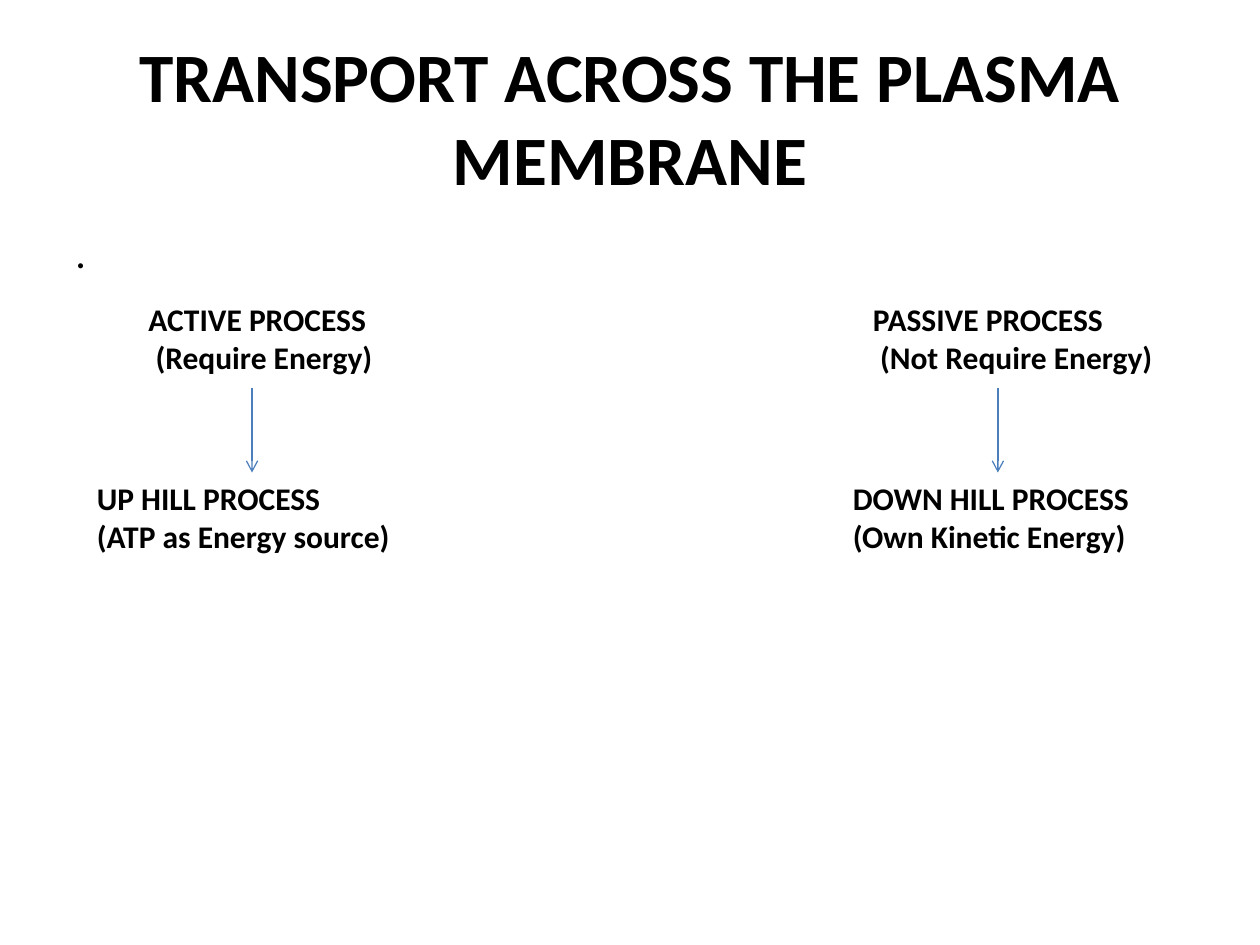
from dataclasses import dataclass

from lxml.etree import SubElement
from pptx import Presentation
from pptx.dml.color import RGBColor
from pptx.enum.shapes import MSO_CONNECTOR
from pptx.enum.text import MSO_ANCHOR, PP_ALIGN
from pptx.oxml.ns import qn
from pptx.slide import Slide
from pptx.text.text import TextFrame
from pptx.util import Inches, Pt

BLACK = RGBColor(0x00, 0x00, 0x00)
ARROW_BLUE = RGBColor(0x4B, 0x7E, 0xBC)
FONT_NAME = "Calibri"

PROCESS_TOP = 2.33
ARROW_TOP = 3.08
DETAIL_TOP = 3.75
LABEL_HEIGHT = 0.71


@dataclass(frozen=True)
class Label:
    left: float
    width: float
    lines: tuple[str, ...]


@dataclass(frozen=True)
class Branch:
    process: Label
    arrow_x: float
    detail: Label


BRANCHES = (
    Branch(
        Label(1.08, 2.08, ("ACTIVE PROCESS", " (Require Energy)")),
        2.0,
        Label(0.67, 2.67, ("UP HILL PROCESS", "(ATP as Energy source)")),
    ),
    Branch(
        Label(6.83, 2.67, ("PASSIVE PROCESS", " (Not Require Energy)")),
        7.92,
        Label(6.67, 2.67, ("DOWN HILL PROCESS", "(Own Kinetic Energy)")),
    ),
)


def add_text(page: Slide, label: Label, top: float, height: float,
             size: float = 18, bold: bool = True) -> TextFrame:
    box = page.shapes.add_textbox(
        Inches(label.left), Inches(top), Inches(label.width), Inches(height))
    frame = box.text_frame
    frame.word_wrap = True
    frame.text = "\n".join(label.lines)
    for paragraph in frame.paragraphs:
        paragraph.font.name = FONT_NAME
        paragraph.font.size = Pt(size)
        paragraph.font.bold = bold
        paragraph.font.color.rgb = BLACK
    return frame


def add_down_arrow(page: Slide, x: float, top: float, bottom: float) -> None:
    arrow = page.shapes.add_connector(
        MSO_CONNECTOR.STRAIGHT, Inches(x), Inches(top), Inches(x), Inches(bottom))
    arrow.line.color.rgb = ARROW_BLUE
    arrow.line.width = Pt(0.75)
    SubElement(arrow.line._get_or_add_ln(), qn("a:tailEnd"), type="arrow")
    SubElement(arrow._element.spPr, qn("a:effectLst"))


def add_branch(page: Slide, branch: Branch) -> None:
    add_text(page, branch.process, PROCESS_TOP, LABEL_HEIGHT)
    add_down_arrow(page, branch.arrow_x, ARROW_TOP, DETAIL_TOP)
    add_text(page, branch.detail, DETAIL_TOP, LABEL_HEIGHT)


def main() -> None:
    deck = Presentation()
    deck.slide_width = Inches(10)
    deck.slide_height = Inches(7.5)
    page = deck.slides.add_slide(deck.slide_layouts[6])

    # Title
    heading = Label(0.5, 9, ("TRANSPORT ACROSS THE PLASMA MEMBRANE",))
    title = add_text(page, heading, 0.3, 1.25, size=39.6)
    title.vertical_anchor = MSO_ANCHOR.MIDDLE
    title.paragraphs[0].alignment = PP_ALIGN.CENTER

    # Body text
    body = add_text(page, Label(0.5, 9, (".",)), 1.75, 4.95, size=24, bold=False)
    body.paragraphs[0].space_before = Pt(4.8)

    # Active and passive branches
    for branch in BRANCHES:
        add_branch(page, branch)

    deck.save("out.pptx")


if __name__ == "__main__":
    main()
